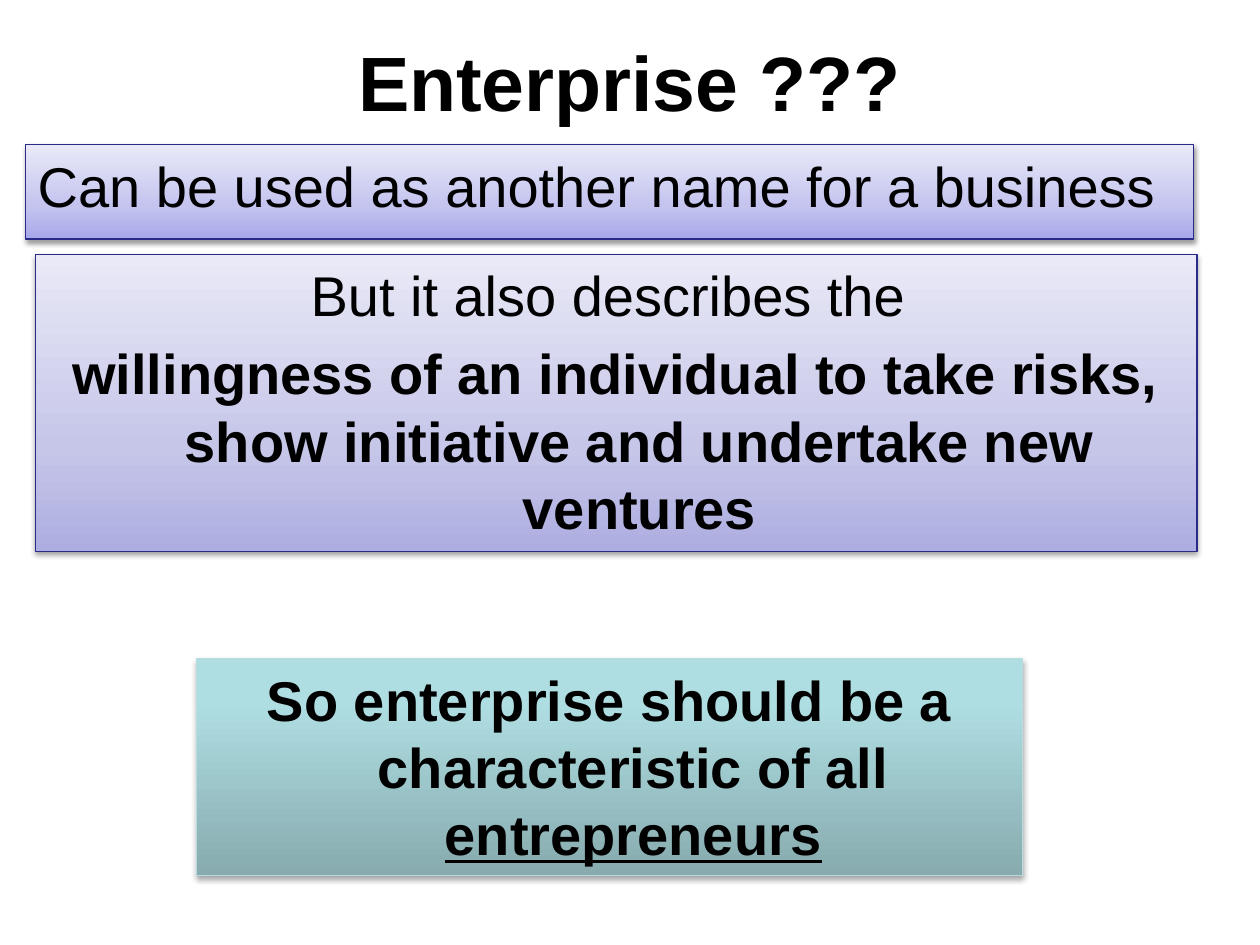
from copy import deepcopy

from lxml import etree
from pptx import Presentation
from pptx import util as u
from pptx.dml.color import RGBColor
from pptx.enum import shapes, text
from pptx.oxml import ns

FONT = "Arial"
LILAC = [(0, "ADADE1"), (35, "C6C6E9"), (100, "E9E9F7")]
VIOLET = [(0, "A8A8EA"), (35, "C4C4EF"), (100, "E9E9F9")]
TEAL = [(0, "87ABAE"), (80, "AFDEE2"), (100, "AFE0E4")]
LEFT, CENTER = text.PP_ALIGN.LEFT, text.PP_ALIGN.CENTER

TITLE = ("Enterprise ???", (1.27, 0.76, 22.86, 1.75))
PANELS = [
    dict(at=(0.51, 2.92, 23.55, 1.9), stops=VIOLET, line="2A2A89", shade=38, drop=1.6, align=LEFT,
         paras=[[("Can be used as another name for a business", False, False)]]),
    dict(at=(3.96, 13.28, 16.66, 4.37), stops=TEAL, line="B6DCDF", shade=35, drop=1.8, align=CENTER,
         paras=[[("So enterprise should be a characteristic of all ", True, False),
                 ("entrepreneurs", True, True)]]),
    dict(at=(0.71, 5.13, 23.42, 5.99), stops=LILAC, line="2A2A89", shade=38, drop=1.6, align=CENTER,
         paras=[[("But it also describes the ", False, False)],
                [("willingness of an individual to take risks, "
                  "show initiative and undertake new ventures", True, False)]]),
]


def color(value):
    return RGBColor.from_string(value)


def style(span, size, bold, underline=False):
    span.font.name = FONT
    span.font.size = u.Pt(size)
    span.font.bold = bold
    span.font.underline = underline
    span.font.color.rgb = color("000000")


def fill_gradient(box, stops):
    box.fill.gradient()
    box.fill.gradient_angle = 90
    stop_list = box._element.spPr.find(".//" + ns.qn("a:gsLst"))
    stop_list.append(deepcopy(stop_list[-1]))
    for stop, (position, value) in zip(box.fill.gradient_stops, stops):
        stop.position = position / 100
        stop.color.rgb = color(value)


def add_shadow(box, shade, drop):
    box.shadow.inherit = False
    effects = box._element.spPr.find(ns.qn("a:effectLst"))
    shadow = etree.SubElement(effects, ns.qn("a:outerShdw"), blurRad=str(u.Pt(3.1)),
                              dist=str(u.Pt(drop)), dir="5400000", rotWithShape="0")
    black = etree.SubElement(shadow, ns.qn("a:srgbClr"), val="000000")
    etree.SubElement(black, ns.qn("a:alpha"), val=str(shade * 1000))


def add_title(page, words, at):
    box = page.shapes.add_textbox(*map(u.Cm, at))
    frame = box.text_frame
    frame.word_wrap = True
    frame.vertical_anchor = text.MSO_ANCHOR.MIDDLE
    frame.text = words
    frame.paragraphs[0].alignment = CENTER
    style(frame.paragraphs[0].runs[0], 44, True)


def add_panel(page, panel):
    box = page.shapes.add_shape(shapes.MSO_SHAPE.RECTANGLE, *map(u.Cm, panel["at"]))
    fill_gradient(box, panel["stops"])
    box.line.color.rgb = color(panel["line"])
    box.line.width = u.Pt(0.75)
    add_shadow(box, panel["shade"], panel["drop"])
    frame = box.text_frame
    frame.word_wrap = True
    frame.vertical_anchor = text.MSO_ANCHOR.TOP
    for index, spans in enumerate(panel["paras"]):
        para = frame.add_paragraph() if index else frame.paragraphs[0]
        para.alignment = panel["align"]
        para.line_spacing = u.Pt(38.5)
        para.space_before = u.Pt(6 if index else 2)
        indent = u.Cm(0.95)
        para._p.get_or_add_pPr().set("marL", str(indent))
        para._p.get_or_add_pPr().set("indent", str(-indent))
        for words, bold, underline in spans:
            span = para.add_run()
            span.text = words
            style(span, 32, bold, underline)


def main():
    deck = Presentation()
    deck.slide_width, deck.slide_height = u.Cm(25.4), u.Cm(19.05)
    page = deck.slides.add_slide(deck.slide_layouts[6])
    add_title(page, *TITLE)
    for panel in PANELS:
        add_panel(page, panel)
    deck.save("out.pptx")


if __name__ == "__main__":
    main()
